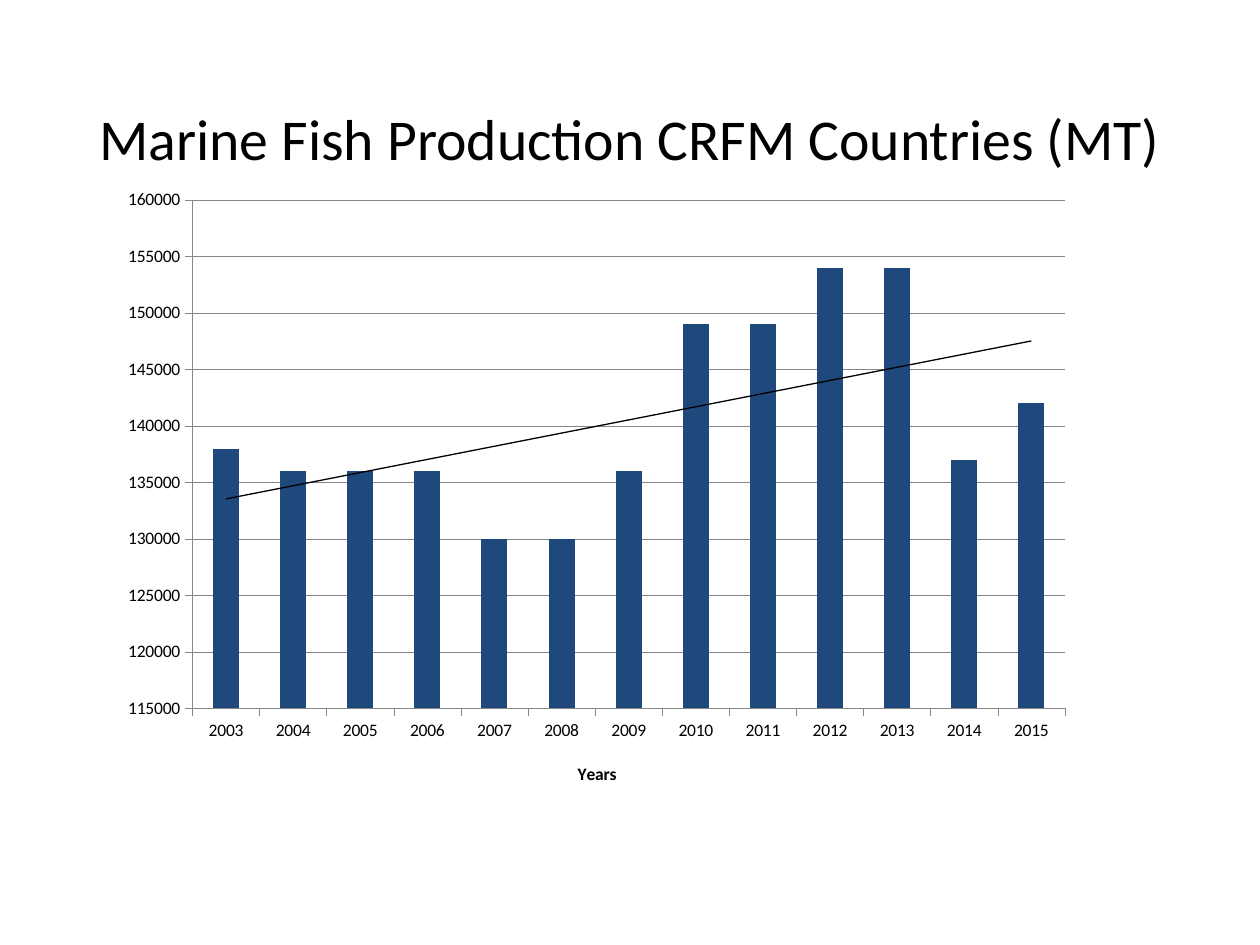
from lxml.etree import SubElement
from pptx import Presentation
from pptx.chart.data import CategoryChartData
from pptx.dml.color import RGBColor
from pptx.enum.chart import XL_CHART_TYPE, XL_TICK_MARK
from pptx.enum.text import MSO_ANCHOR, PP_ALIGN
from pptx.oxml import parse_xml
from pptx.oxml.ns import nsdecls, qn
from pptx.util import Inches, Pt

# Content
TITLE = "Marine Fish Production CRFM Countries (MT)"
AXIS_TITLE = "Years"
FIRST_YEAR = 2003
PRODUCTION = [138000, 136000, 136000, 136000, 130000, 130000, 136000,
              149000, 149000, 154000, 154000, 137000, 142000]
FONT = "Calibri"
COLORS = {"text": "000000", "bar": "1F497D", "line": "868686", "trend": "000000"}


def rgb(name):
    return RGBColor.from_string(COLORS[name])


def set_font(font, size, bold=False):
    font.name, font.size, font.bold = FONT, Pt(size), bold
    font.color.rgb = rgb("text")


def set_layout(parent, inner=False, **place):
    """Give a chart part a manual place, as fractions of the chart."""
    layout = parent.find(qn("c:layout"))
    if layout is None:
        layout = parse_xml(f"<c:layout {nsdecls('c')}/>")
        tx = parent.find(qn("c:tx"))
        parent.insert(0 if tx is None else parent.index(tx) + 1, layout)
    for child in list(layout):
        layout.remove(child)
    manual = SubElement(layout, qn("c:manualLayout"))
    if inner:
        SubElement(manual, qn("c:layoutTarget")).set("val", "inner")
    for mode in ("xMode", "yMode"):
        SubElement(manual, qn(f"c:{mode}")).set("val", "edge")
    for key, value in place.items():
        SubElement(manual, qn(f"c:{key}")).set("val", str(value))


prs = Presentation()
prs.slide_width, prs.slide_height = Inches(10), Inches(7.5)
s = prs.slides.add_slide(prs.slide_layouts[6])

# Title
tf = s.shapes.add_textbox(Inches(0.69), Inches(0.4), Inches(8.62), Inches(1.45)).text_frame
tf.word_wrap = True
tf.vertical_anchor = MSO_ANCHOR.MIDDLE
p = tf.paragraphs[0]
p.text = TITLE
p.alignment = PP_ALIGN.LEFT
p.line_spacing = 0.9
set_font(p.font, 33)

# Column chart
data = CategoryChartData()
data.categories = [str(FIRST_YEAR + i) for i in range(len(PRODUCTION))]
data.add_series("Series 1", PRODUCTION)
chart = s.shapes.add_chart(XL_CHART_TYPE.COLUMN_CLUSTERED, Inches(0.11), Inches(0),
                           Inches(9.78), Inches(7.42), data).chart
chart.has_legend = False
chart.has_title = False
set_font(chart.font, 10)

plot = chart.plots[0]
set_layout(plot._element.getparent(), inner=True, x=0.145, y=0.214, w=0.708, h=0.544)
plot.vary_by_categories = False
plot.gap_width, plot.overlap = 158, 8
ser = plot.series[0]
ser.format.fill.solid()
ser.format.fill.fore_color.rgb = rgb("bar")

# Linear trend line
ser._element.find(qn("c:cat")).addprevious(parse_xml(
    f'<c:trendline {nsdecls("c", "a")}><c:spPr><a:ln w="{Pt(0.75)}"><a:solidFill>'
    f'<a:srgbClr val="{COLORS["trend"]}"/></a:solidFill></a:ln></c:spPr>'
    '<c:trendlineType val="linear"/><c:dispRSqr val="0"/><c:dispEq val="0"/></c:trendline>'))

# Axes
cat_axis, val_axis = chart.category_axis, chart.value_axis
val_axis.minimum_scale, val_axis.maximum_scale, val_axis.major_unit = 115000, 160000, 5000
val_axis.has_major_gridlines = True
for part in (cat_axis, val_axis, val_axis.major_gridlines):
    part.format.line.color.rgb = rgb("line")
    part.format.line.width = Pt(0.25)
for axis in (cat_axis, val_axis):
    axis.major_tick_mark = XL_TICK_MARK.OUTSIDE
    axis.minor_tick_mark = XL_TICK_MARK.NONE
    set_font(axis.tick_labels.font, 10)

p = cat_axis.axis_title.text_frame.paragraphs[0]
p.text = AXIS_TITLE
set_font(p.font, 10, bold=True)
set_layout(cat_axis.axis_title._element, x=0.455, y=0.812)

prs.save("out.pptx")
